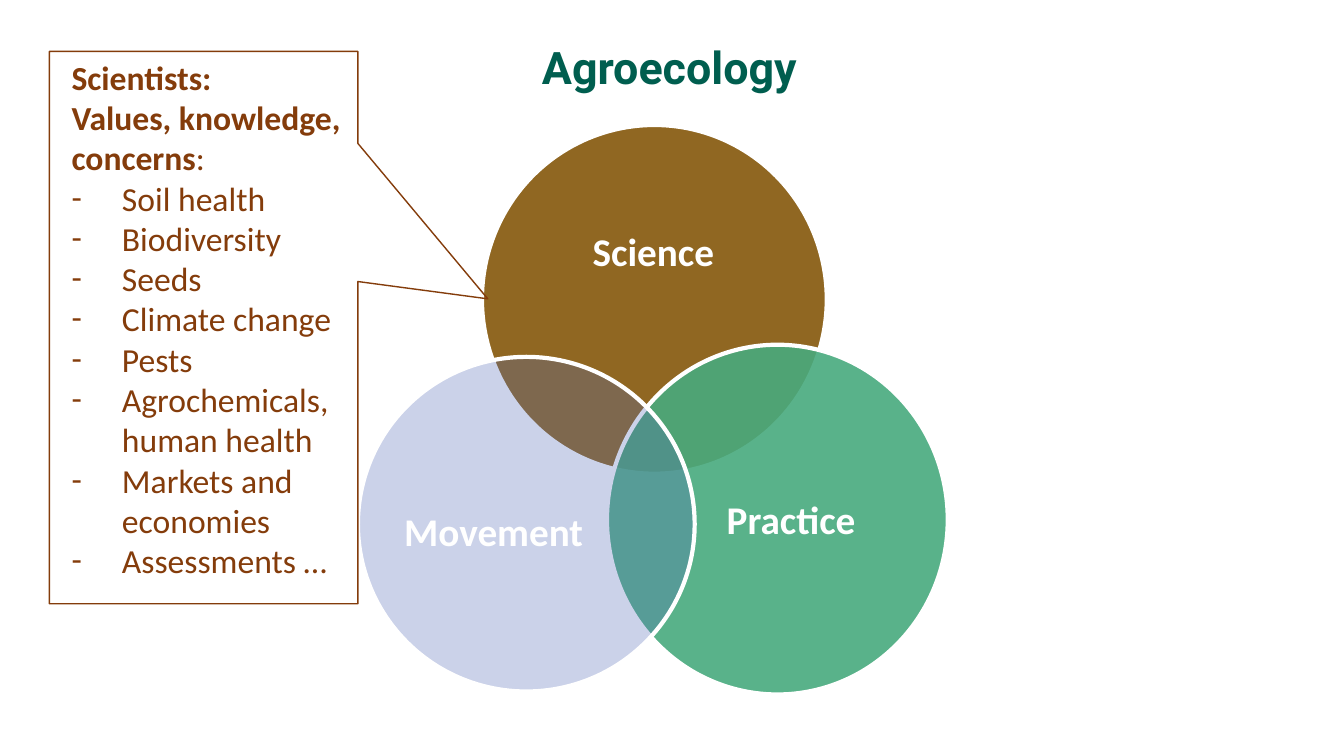
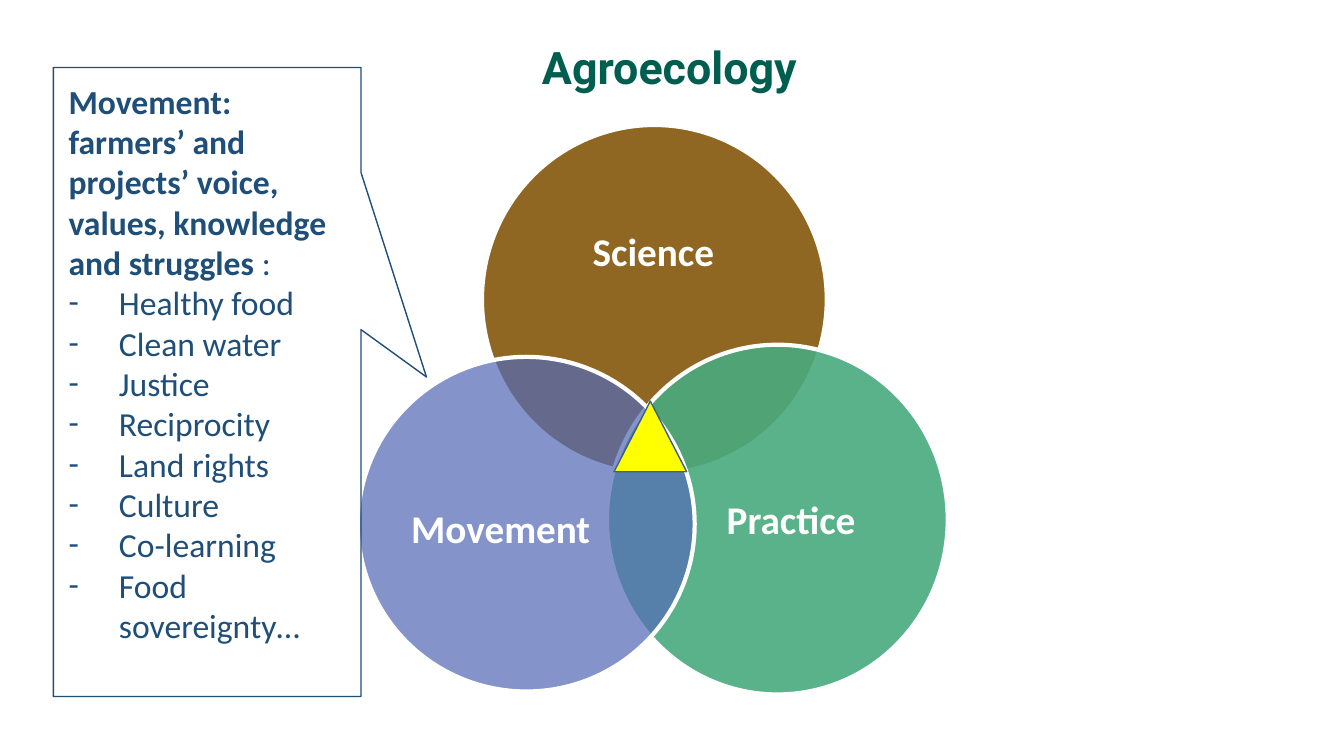
from dataclasses import dataclass

from lxml.etree import SubElement
from pptx import Presentation
from pptx.dml.color import RGBColor
from pptx.enum.shapes import MSO_SHAPE as Preset
from pptx.enum.text import MSO_ANCHOR as Anchor, MSO_AUTO_SIZE as AutoSize, PP_ALIGN as Align
from pptx.oxml.ns import qn
from pptx.util import Emu, Pt

EMU_PER_PX = 9144
INDENT_PX = 50
BODY_FONT, TITLE_FONT = "Calibri", "Roboto"
COLORS = {
    "title": "005E4F", "white": "FFFFFF", "science": "85570B", "practice": "48AA7E",
    "movement": "556CB7", "scientists_ink": "843C0B", "movement_ink": "1F4E79",
    "highlight": "FFFF00", "highlight_edge": "3A5F8C",
}


@dataclass(frozen=True)
class Box:
    """A rectangle in px."""
    left: int
    top: int
    width: int
    height: int

    def emu(self) -> tuple:
        """Return the rectangle as EMU lengths."""
        return tuple(px(n) for n in (self.left, self.top, self.width, self.height))


@dataclass(frozen=True)
class Circle:
    """One labelled circle of the Venn diagram."""
    label: str
    box: Box
    label_box: Box
    color: str
    opacity: int
    align: Align = Align.LEFT


@dataclass(frozen=True)
class Callout:
    """An outlined callout with its heading and list."""
    box: Box
    pointer: tuple[float, float]
    text_box: Box
    ink: str
    heading: str
    subheading: str
    items: tuple[str, ...]


@dataclass(frozen=True)
class Page:
    """What differs from one slide to the next."""
    callout: Callout
    movement_label: Box
    movement_opacity: int
    highlight: Box | None = None


SCIENCE = Circle("Science", Box(478, 124, 342, 346), Box(542, 221, 212, 57),
                 "science", 90, Align.CENTER)
PRACTICE = Circle("Practice", Box(602, 342, 338, 347), Box(711, 486, 203, 70), "practice", 90)
MOVEMENT_BOX = Box(355, 354, 334, 332)
TITLE_BOX = Box(62, 28, 1204, 82)

PAGES = (
    Page(
        Callout(
            Box(49, 51, 306, 548), (0.921, -0.052), Box(61, 51, 335, 535), "scientists_ink",
            "Scientists:", "Values, knowledge, concerns",
            ("Soil health", "Biodiversity", "Seeds", "Climate change", "Pests",
             "Agrochemicals, human health", "Markets and economies", "Assessments …"),
        ),
        Box(391, 498, 278, 70), 30,
    ),
    Page(
        Callout(
            Box(53, 67, 305, 624), (0.713, -0.008), Box(58, 75, 306, 576), "movement_ink",
            "Movement:", "farmers’ and projects’ voice, values, knowledge and struggles ",
            ("Healthy food", "Clean water", "Justice", "Reciprocity", "Land rights",
             "Culture", "Co-learning", "Food sovereignty…"),
        ),
        Box(398, 495, 278, 70), 72, Box(609, 398, 72, 70),
    ),
)


def px(length: int) -> Emu:
    """Convert px to EMU."""
    return Emu(length * EMU_PER_PX)


def rgb(name: str) -> RGBColor:
    """Look up a named colour."""
    return RGBColor.from_string(COLORS[name])


def place(shape, box: Box) -> None:
    """Move and size a shape."""
    shape.left, shape.top, shape.width, shape.height = box.emu()


def add_run(paragraph, text: str, size: int, color: str, bold: bool = True,
            font: str = BODY_FONT) -> None:
    """Append one formatted run."""
    run = paragraph.add_run()
    run.text = text
    run.font.name, run.font.size, run.font.bold = font, Pt(size), bold
    run.font.color.rgb = rgb(color)


def add_preset(shapes, preset: Preset, box: Box, line: str, width: int,
               fill: str | None = None, opacity: int = 100):
    """Draw a preset shape with an outline and an optional fill."""
    shape = shapes.add_shape(preset, *box.emu())
    shape.shadow.inherit = False
    shape.line.color.rgb = rgb(line)
    shape.line.width = Pt(width)
    if fill is None:
        shape.fill.background()
        return shape
    shape.fill.solid()
    shape.fill.fore_color.rgb = rgb(fill)
    if opacity < 100:
        color = shape.element.spPr.find(qn("a:solidFill"))[0]
        SubElement(color, qn("a:alpha"), val=str(opacity * 1000))
    return shape


def set_title(slide) -> None:
    """Fill the title placeholder."""
    title = slide.shapes.title
    place(title, TITLE_BOX)
    frame = title.text_frame
    frame.auto_size, frame.vertical_anchor = AutoSize.NONE, Anchor.MIDDLE
    paragraph = frame.paragraphs[0]
    paragraph.alignment, paragraph.line_spacing = Align.CENTER, 0.9
    add_run(paragraph, "Agroecology", 32, "title", font=TITLE_FONT)


def add_venn(slide, circles: tuple[Circle, ...]) -> None:
    """Draw the grouped circles and their labels."""
    shapes = slide.shapes.add_group_shape().shapes
    for circle in circles:
        add_preset(shapes, Preset.OVAL, circle.box, "white", 3, circle.color, circle.opacity)
        frame = shapes.add_textbox(*circle.label_box.emu()).text_frame
        frame.word_wrap = True
        paragraph = frame.paragraphs[0]
        paragraph.alignment = circle.align
        add_run(paragraph, circle.label, 28, "white")


def format_paragraph(paragraph, bullet: bool) -> None:
    """Set the spacing, and a hanging dash or no bullet."""
    paragraph.space_before = Pt(0)
    properties = paragraph._p.get_or_add_pPr()
    indent = px(INDENT_PX) if bullet else 0
    properties.set("marL", str(indent))
    properties.set("indent", str(-indent))
    if bullet:
        SubElement(properties, qn("a:buFont"), typeface=BODY_FONT)
        SubElement(properties, qn("a:buChar"), char="-")
    else:
        SubElement(properties, qn("a:buNone"))


def add_callout(slide, callout: Callout) -> None:
    """Fill the body placeholder and outline it with a callout."""
    body = slide.placeholders[1]
    place(body, callout.text_box)
    frame = body.text_frame
    frame.auto_size, frame.word_wrap = AutoSize.NONE, True
    heading, subheading = frame.paragraphs[0], frame.add_paragraph()
    for paragraph in (heading, subheading):
        format_paragraph(paragraph, bullet=False)
    add_run(heading, callout.heading, 24, callout.ink)
    add_run(subheading, callout.subheading, 24, callout.ink)
    add_run(subheading, ":", 24, callout.ink, bold=False)
    for item in callout.items:
        paragraph = frame.add_paragraph()
        format_paragraph(paragraph, bullet=True)
        add_run(paragraph, item, 24, callout.ink, bold=False)
    outline = add_preset(slide.shapes, Preset.RECTANGULAR_CALLOUT, callout.box, callout.ink, 1)
    for index, value in enumerate(callout.pointer):
        outline.adjustments[index] = value


def add_page(presentation, page: Page) -> None:
    """Build one slide."""
    slide = presentation.slides.add_slide(presentation.slide_layouts[1])
    set_title(slide)
    movement = Circle("Movement", MOVEMENT_BOX, page.movement_label,
                      "movement", page.movement_opacity)
    add_venn(slide, (SCIENCE, PRACTICE, movement))
    if page.highlight:
        add_preset(slide.shapes, Preset.FLOWCHART_EXTRACT, page.highlight,
                   "highlight_edge", 1, "highlight")
    add_callout(slide, page.callout)


def main() -> None:
    """Build and save the presentation."""
    presentation = Presentation()
    presentation.slide_width, presentation.slide_height = px(1333), px(750)
    for page in PAGES:
        add_page(presentation, page)
    presentation.save("out.pptx")


if __name__ == "__main__":
    main()
